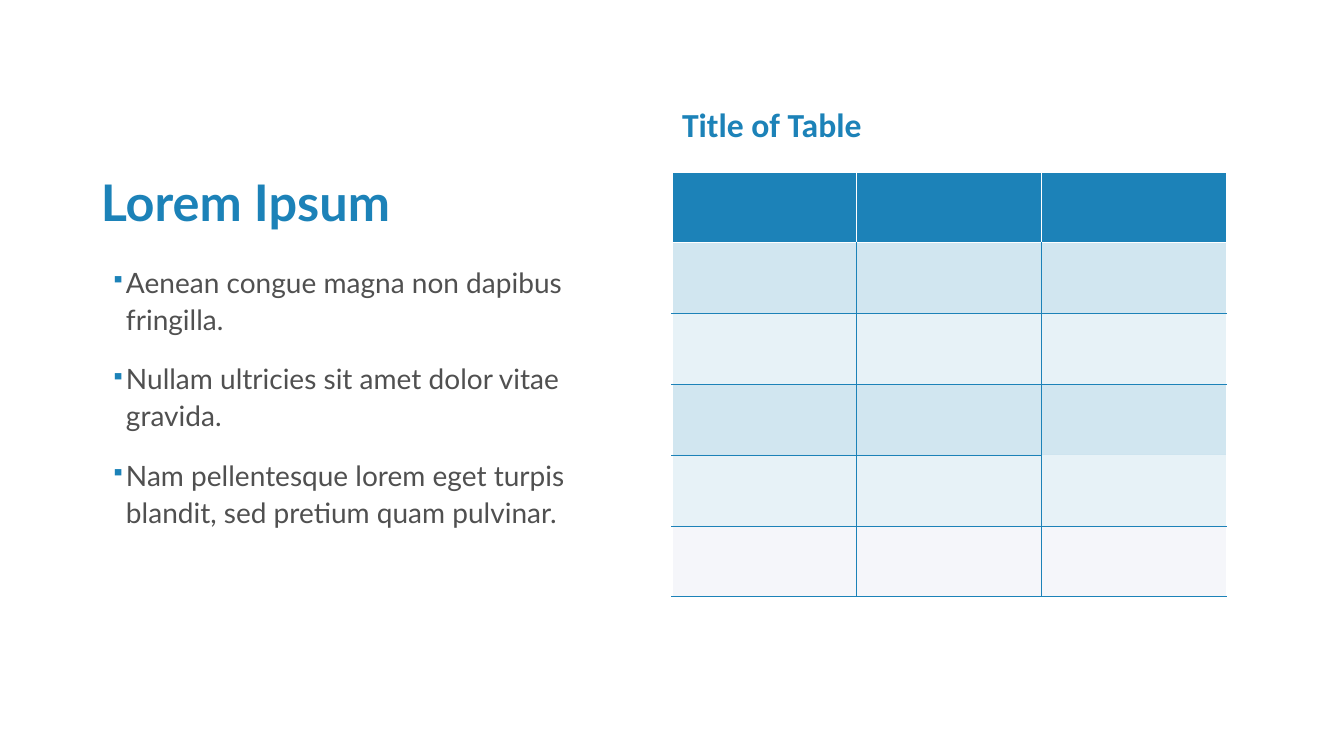
from lxml.etree import SubElement
from pptx import Presentation
from pptx.dml.color import RGBColor
from pptx.enum.text import MSO_ANCHOR, MSO_AUTO_SIZE, PP_ALIGN
from pptx.oxml import parse_xml
from pptx.oxml.ns import nsdecls, qn
from pptx.util import Inches, Pt

COLORS = {"accent": "1C82B8", "text": "505050", "white": "FFFFFF", "last": "CFD5EA"}
SLIDE_WIDTH, SLIDE_HEIGHT = Inches(13.33), Inches(7.5)
GRID_COLUMN, GRID_ROW = SLIDE_WIDTH / 40, SLIDE_HEIGHT / 30
TITLE_FONT = {"name": "Lato", "size": Pt(36), "bold": True}
BODY_FONT = {"name": "Lato", "size": Pt(20), "bold": False}
TABLE_FONT = {"name": "Calibri", "size": Pt(24), "bold": True}
TITLE_SPACING = {"alignment": PP_ALIGN.LEFT, "line_spacing": 1.1, "space_before": Pt(0)}
FRAME = {"margin_left": 0, "margin_top": 0, "margin_right": 0, "margin_bottom": 0,
         "word_wrap": True, "auto_size": MSO_AUTO_SIZE.NONE}
POINTS = [
    "Aenean congue magna non dapibus fringilla.",
    "Nullam ultricies sit amet dolor vitae gravida.",
    "Nam pellentesque lorem eget turpis blandit, sed pretium quam pulvinar.",
]
ROW_FILLS = [("white", 100), ("accent", 100), ("accent", 20), ("accent", 10),
             ("accent", 20), ("accent", 10), ("last", 20)]
COLUMN_COUNT = 3
OPEN_EDGES = [(4, 2, "B"), (5, 2, "T")]


def grid_box(column, row, columns, rows):
    return [round(length) for length in (column * GRID_COLUMN, row * GRID_ROW,
                                         columns * GRID_COLUMN, rows * GRID_ROW)]


def set_values(target, values):
    for name, value in values.items():
        setattr(target, name, value)


def set_font(font, values, color):
    set_values(font, values)
    font.color.rgb = RGBColor.from_string(COLORS[color])


def add_bullet(paragraph):
    properties = paragraph._p.get_or_add_pPr()
    properties.set("marL", str(Inches(0.25)))
    properties.set("indent", str(Inches(-0.15)))
    bullet_color = SubElement(properties, qn("a:buClr"))
    SubElement(bullet_color, qn("a:srgbClr"), val=COLORS["accent"])
    SubElement(properties, qn("a:buSzPct"), val="70000")
    SubElement(properties, qn("a:buChar"), char="▪")


def place_title(slide, box):
    title = slide.shapes.title
    title.left, title.top, title.width, title.height = box
    set_values(title.text_frame, {**FRAME, "vertical_anchor": MSO_ANCHOR.BOTTOM})
    title.text_frame.text = "Lorem Ipsum"
    paragraph = title.text_frame.paragraphs[0]
    set_values(paragraph, TITLE_SPACING)
    set_font(paragraph.font, TITLE_FONT, "accent")


def add_points(slide, box):
    frame = slide.shapes.add_textbox(*box).text_frame
    set_values(frame, FRAME)
    for index, point in enumerate(POINTS):
        paragraph = frame.add_paragraph() if index else frame.paragraphs[0]
        paragraph.text = point
        add_bullet(paragraph)
        set_values(paragraph, {"line_spacing": 1.1, "space_after": Pt(6),
                               "space_before": Pt(10 if index else 0)})
        set_font(paragraph.font, BODY_FONT, "text")


def edge_style(row, column, side):
    if (row, column, side) in OPEN_EDGES:
        return None
    if row == 0 and side == "B":
        return "white", 3
    outer = (column == 0 and side == "L") or (column == COLUMN_COUNT - 1 and side == "R")
    if row < 2 or outer or (row == 2 and side == "T"):
        return "white", 1
    return "accent", 0.5


def add_edge(cell, side, style):
    properties = cell._tc.get_or_add_tcPr()
    color, width = style or ("white", 0)
    paint = (f'<a:solidFill><a:srgbClr val="{COLORS[color]}"/></a:solidFill>'
             if style else "<a:noFill/>")
    properties.insert("LRTB".index(side), parse_xml(
        f'<a:ln{side} {nsdecls("a")} w="{Pt(width)}">{paint}</a:ln{side}>'))


def fill_cell(cell, color, opacity):
    cell.fill.solid()
    cell.fill.fore_color.rgb = RGBColor.from_string(COLORS[color])
    if opacity < 100:
        color_element = cell._tc.tcPr.find(".//" + qn("a:srgbClr"))
        SubElement(color_element, qn("a:alpha"), val=str(opacity * 1000))


def add_titled_table(slide, box):
    table = slide.shapes.add_table(len(ROW_FILLS), COLUMN_COUNT, *box).table
    for row, fill in enumerate(ROW_FILLS):
        for column in range(COLUMN_COUNT):
            cell = table.cell(row, column)
            fill_cell(cell, *fill)
            for side in "LRTB":
                add_edge(cell, side, edge_style(row, column, side))
    heading = table.cell(0, 0)
    heading.merge(table.cell(0, COLUMN_COUNT - 1))
    heading.text = "Title of Table"
    set_font(heading.text_frame.paragraphs[0].font, TABLE_FONT, "accent")


def main():
    presentation = Presentation()
    presentation.slide_width, presentation.slide_height = SLIDE_WIDTH, SLIDE_HEIGHT
    slide = presentation.slides.add_slide(presentation.slide_layouts[5])
    add_titled_table(slide, grid_box(20, 4, 16.5, 19.68))
    place_title(slide, grid_box(3, 4, 16, 5.2))
    add_points(slide, grid_box(3, 10.4, 16, 13))
    presentation.save("out.pptx")


if __name__ == "__main__":
    main()
